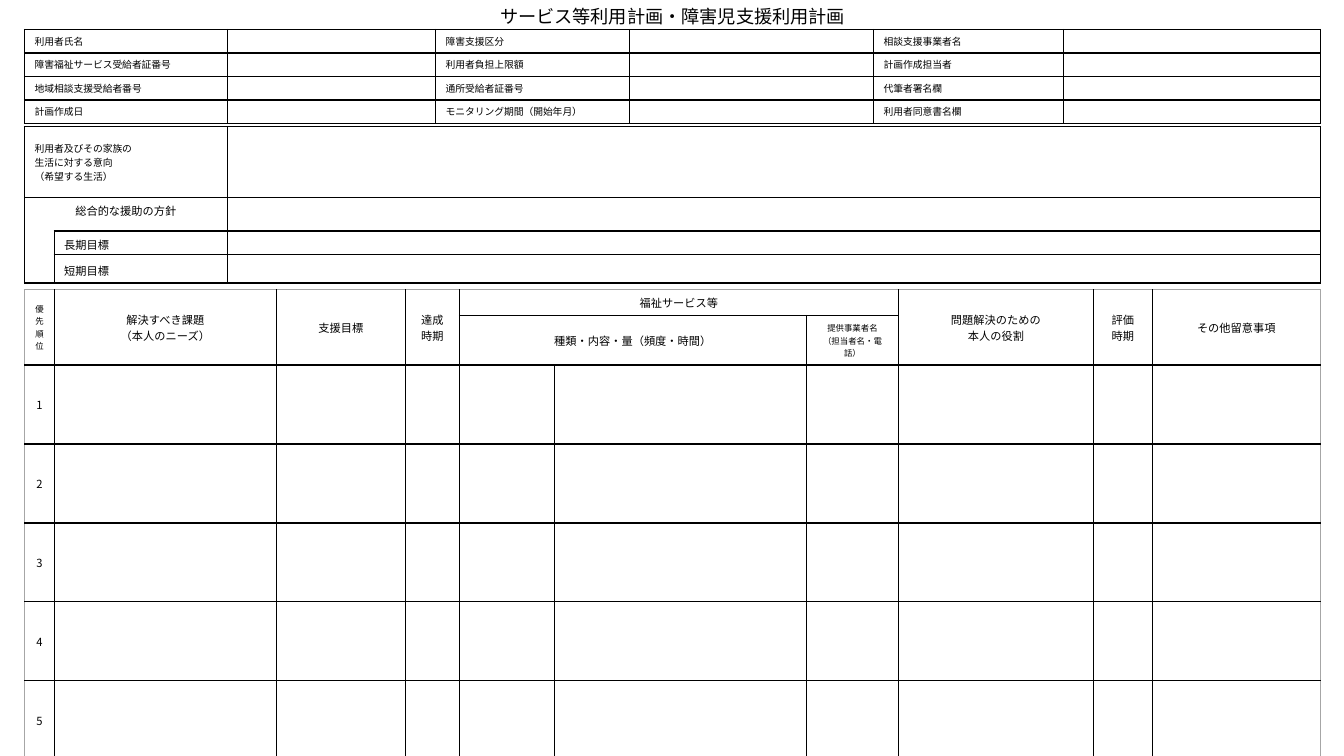
import dataclasses

import pptx
import pptx.dml.color
import pptx.enum.text
import pptx.oxml
import pptx.oxml.ns
import pptx.util

Pt = pptx.util.Pt
LEFT = pptx.enum.text.PP_ALIGN.LEFT
CENTER = pptx.enum.text.PP_ALIGN.CENTER
MIDDLE = pptx.enum.text.MSO_ANCHOR.MIDDLE
TOP = pptx.enum.text.MSO_ANCHOR.TOP
DRAWING = pptx.oxml.ns.nsdecls("a")


@dataclasses.dataclass(frozen=True)
class Theme:
    font: str = "Noto Sans CJK JP"
    ink: str = "000000"
    faint: str = "A6A6A6"
    title: float = 13
    body: float = 8
    label: float = 7
    small: float = 6
    rule: float = 1
    hairline: float = 0.5


@dataclasses.dataclass(frozen=True)
class Box:
    left: float
    top: float
    width: float
    height: float


THEME = Theme()
BASIC_ITEMS = [
    ["利用者氏名", "障害支援区分", "相談支援事業者名"],
    ["障害福祉サービス受給者証番号", "利用者負担上限額", "計画作成担当者"],
    ["地域相談支援受給者番号", "通所受給者証番号", "代筆者署名欄"],
    ["計画作成日", "モニタリング期間（開始年月）", "利用者同意書名欄"],
]
PLAN_HEADINGS = {
    1: ["解決すべき課題", "（本人のニーズ）"],
    2: ["支援目標"],
    3: ["達成", "時期"],
    7: ["問題解決のための", "本人の役割"],
    8: ["評価", "時期"],
    9: ["その他留意事項"],
}


def write(frame, lines, size, align=LEFT):
    for number, line in enumerate(lines):
        para = frame.paragraphs[0] if number == 0 else frame.add_paragraph()
        para.alignment = align
        span = para.add_run()
        span.text = line
        span.font.size = Pt(size)
        span.font.name = THEME.font
        span.font.color.rgb = pptx.dml.color.RGBColor.from_string(THEME.ink)
        span.font._element.append(pptx.oxml.parse_xml(
            f'<a:ea {DRAWING} typeface="{THEME.font}"/>'))


def fill_cell(cell, lines, size, align=LEFT, anchor=MIDDLE, upright=False):
    write(cell.text_frame, lines, size, align)
    cell.vertical_anchor = anchor
    if upright:
        cell._tc.get_or_add_tcPr().set("vert", "eaVert")


def rule_cell(cell, faint_sides):
    """Draw the four borders of a cell, the named sides in the faint hairline."""
    properties = cell._tc.get_or_add_tcPr()
    for side in "LRTB":
        faint = side in faint_sides
        color = THEME.faint if faint else THEME.ink
        width = Pt(THEME.hairline if faint else THEME.rule)
        properties.append(pptx.oxml.parse_xml(
            f'<a:ln{side} {DRAWING} w="{width}"><a:solidFill>'
            f'<a:srgbClr val="{color}"/></a:solidFill></a:ln{side}>'))
    cell.fill.background()


def add_grid(page, box, widths, heights, margins=(2.5, 2.5), faint_frame=False):
    """Add an empty ruled table; widths and heights are shares of the box."""
    table = page.shapes.add_table(
        len(heights), len(widths),
        Pt(box.left), Pt(box.top), Pt(box.width), Pt(box.height)).table
    table.first_row = table.horz_banding = False
    for column, width in zip(table.columns, widths):
        column.width = Pt(box.width * width / sum(widths))
    for row, height in zip(table.rows, heights):
        row.height = Pt(box.height * height / sum(heights))
    last = len(widths) - 1
    for r, row in enumerate(table.rows):
        for c, cell in enumerate(row.cells):
            edges = (("L", c == 0), ("R", c == last), ("T", r == 0))
            rule_cell(cell, [side for side, outer in edges if faint_frame and outer])
            cell.margin_top, cell.margin_bottom = map(Pt, margins)
            cell.text_frame.paragraphs[0]._p.append(pptx.oxml.parse_xml(
                f'<a:endParaRPr {DRAWING} sz="{int(THEME.small * 100)}"/>'))
    return table


def add_title(page, box):
    shape = page.shapes.add_textbox(
        Pt(box.left), Pt(box.top), Pt(box.width), Pt(box.height))
    frame = shape.text_frame
    frame.word_wrap = True
    frame.vertical_anchor = MIDDLE
    frame.margin_top = frame.margin_bottom = Pt(1)
    write(frame, ["サービス等利用計画・障害児支援利用計画"], THEME.title, CENTER)


def add_basic_items(page, box):
    table = add_grid(page, box, [145, 148.6, 138.6, 174.3, 135.7, 183.6], [1] * 4)
    for r, labels in enumerate(BASIC_ITEMS):
        for c, label in enumerate(labels):
            fill_cell(table.cell(r, 2 * c), [label], THEME.label)


def add_wishes_and_policy(page, box):
    """Add the wishes and policy table with the goals table laid into its foot."""
    table = add_grid(page, box, [145, 780.8], [50.7, 61.1], (3.6, 3.6))
    wishes = ["利用者及びその家族の", "生活に対する意向", "（希望する生活）"]
    fill_cell(table.cell(0, 0), wishes, THEME.label)
    fill_cell(table.cell(1, 0), ["総合的な援助の方針"], THEME.body, CENTER, TOP)

    indent, height = 21.2, 37.2
    inner = Box(box.left + indent, box.top + box.height - height,
                box.width - indent, height)
    goals = add_grid(page, inner, [123.8, 780.8], [16.8, 20.4], (3.6, 1.4))
    for r, label in enumerate(["長期目標", "短期目標"]):
        fill_cell(goals.cell(r, 0), [label], THEME.body)


def add_service_plan(page, box):
    widths = [21.4, 158.6, 92.1, 38.6, 67.9, 180, 65.7, 139.3, 42.1, 120]
    priorities = range(1, 6)
    heights = [18.6, 35.4] + [56.4] * len(priorities)
    table = add_grid(page, box, widths, heights, faint_frame=True)
    for c in [0, *PLAN_HEADINGS]:
        table.cell(0, c).merge(table.cell(1, c))
    table.cell(0, 4).merge(table.cell(0, 6))
    table.cell(1, 4).merge(table.cell(1, 5))

    fill_cell(table.cell(0, 0), ["優先順位"], THEME.small, CENTER, upright=True)
    for c, lines in PLAN_HEADINGS.items():
        fill_cell(table.cell(0, c), lines, THEME.body, CENTER)
    fill_cell(table.cell(0, 4), ["福祉サービス等"], THEME.body, CENTER)
    fill_cell(table.cell(1, 4), ["種類・内容・量（頻度・時間）"], THEME.body, CENTER)
    provider = ["提供事業者名", "（担当者名・電話）"]
    fill_cell(table.cell(1, 6), provider, THEME.small, CENTER)
    for priority in priorities:
        fill_cell(table.cell(priority + 1, 0), [str(priority)], THEME.body,
                  CENTER, upright=True)


def main():
    deck = pptx.Presentation()
    deck.slide_width, deck.slide_height = Pt(960), Pt(540)
    page = deck.slides.add_slide(deck.slide_layouts[6])
    left, width = 17.5, 925.8
    add_title(page, Box(243.4, 0, 473.8, 23))
    add_basic_items(page, Box(left, 21.1, width, 67.2))
    add_wishes_and_policy(page, Box(left, 90.4, width, 111.8))
    add_service_plan(page, Box(left, 206.8, width, 336))
    deck.save("out.pptx")


if __name__ == "__main__":
    main()
